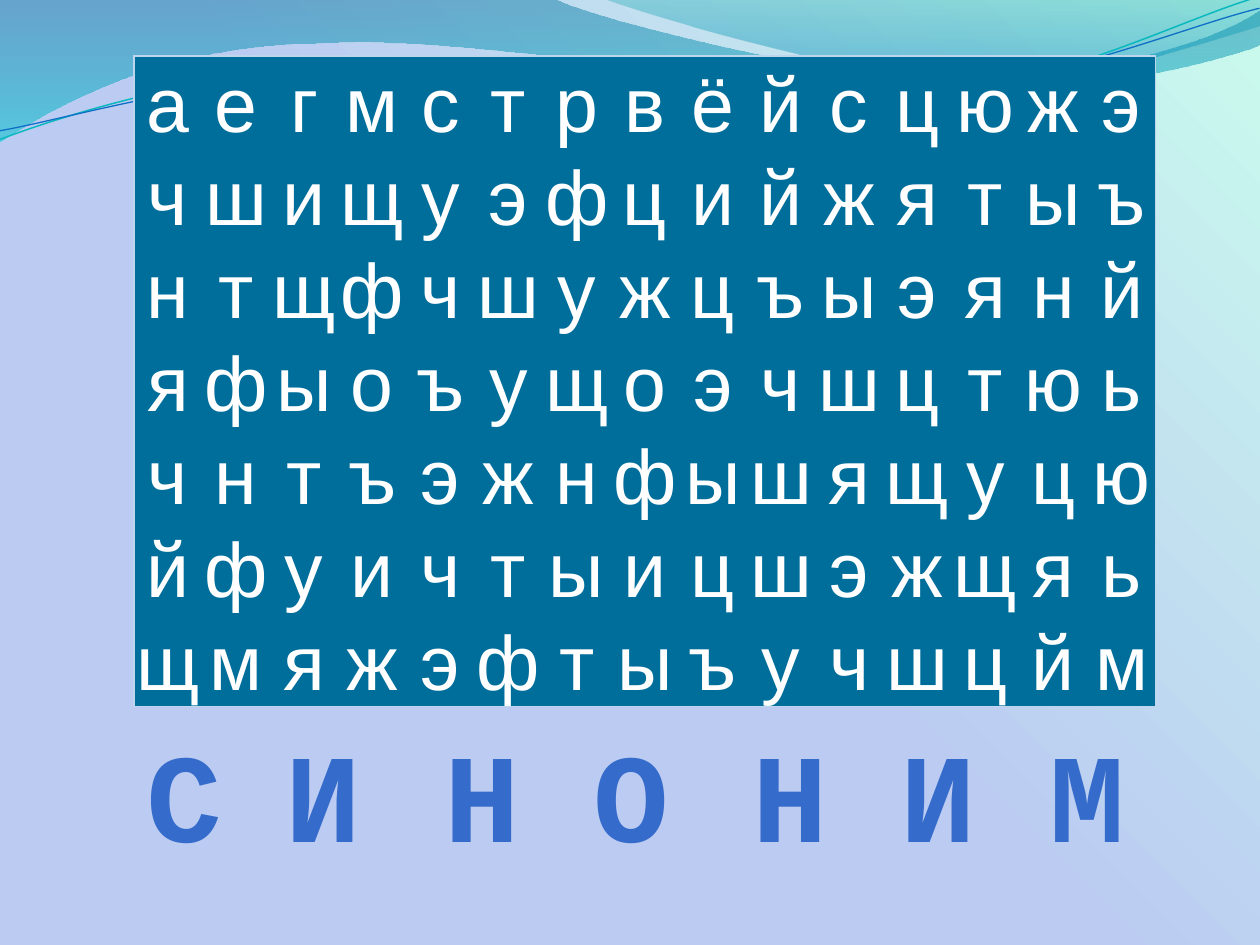
from dataclasses import dataclass

from lxml import etree
from pptx import Presentation
from pptx import util as u
from pptx.dml.color import RGBColor
from pptx.enum import text
from pptx.oxml import ns

PX = 914400 // 126  # EMU in one px


@dataclass(frozen=True)
class Theme:
    # Gradient stops are (position %, colour, opacity %)
    page: tuple = ((0, "BBCBF2", 100), (50, "BBCBF2", 100), (100, "CAFBED", 100))
    back_wave: tuple = ((0, "0074A1", 45), (100, "00C6CF", 55))
    front_wave: tuple = ((0, "00A1A9", 30), (80, "008BBF", 45), (100, "008BBF", 45))
    answer: tuple = ((0, "6488D4", 100), (49, "356BCA", 100), (50, "005DB1", 100),
                     (92, "00539E", 100), (100, "00519B", 100))
    teal_line: str = "0AB8BF"
    blue_line: str = "0F6FC6"
    grid_fill: str = "006E9B"
    grid_border: str = "BDD5ED"
    grid_text: str = "FFFFFF"
    grid_font: str = "Arial"
    grid_size: int = 44
    answer_font: str = "Courier New"
    answer_size: int = 72


THEME = Theme()

LETTER_ROWS = (
    "аегмстрвёйсцюжэ",
    "чшищуэфцийжятыъ",
    "нтщфчшужцъыэянй",
    "яфыоъущоэчшцтюь",
    "чнтъэжнфышящуцю",
    "йфуичтыицшэжщяь",
    "щмяжэфтыъучшцйм",
)

# Letter, left and width in px
ANSWER = (("С", 134, 110), ("И", 273, 118), ("Н", 432, 112), ("О", 581, 149),
          ("Н", 740, 89), ("И", 888, 139), ("М", 1037, 118))

# Outlines in px: two numbers are a line's end, six are a Bezier curve
BACK_WAVE = ((0, -1), (554, -1), (600, 21, 837, 79, 955, 79),
             (1075, 79, 1207, 47, 1260, 11), (1261, 45),
             (1239, 55, 1096, 96, 940, 95), (784, 95, 481, 35, 324, 43),
             (163, 44, 58, 105, -1, 142))
FRONT_WAVE = ((604, -1), (641, 14, 859, 78, 969, 82),
              (1079, 87, 1211, 40, 1260, 26), (1260, 0))
TEAL_CURVE = ((-3, 110), (58, 90, 199, 52, 350, 53), (499, 53, 745, 118, 896, 114),
              (1049, 109, 1184, 45, 1260, 27))
BLUE_CURVE = ((-2, 101), (57, 94, 207, 57, 357, 58), (509, 58, 751, 111, 902, 108),
              (1052, 104, 1188, 52, 1262, 38))


def px(length):
    return u.Emu(length * PX)


def child(parent, tag, **attributes):
    return etree.SubElement(parent, ns.qn(tag), attributes)


def use_gradient(parent, stops, angle):
    """Put a gradient in the place of the parent's solid fill."""
    solid = parent.find(ns.qn("a:solidFill"))
    gradient = etree.Element(ns.qn("a:gradFill"), rotWithShape="1")
    stop_list = child(gradient, "a:gsLst")
    for position, colour, opacity in stops:
        stop = child(stop_list, "a:gs", pos=str(position * 1000))
        shade = child(stop, "a:srgbClr", val=colour)
        if opacity < 100:
            child(shade, "a:alpha", val=str(opacity * 1000))
    child(gradient, "a:lin", ang=str(angle * 60000), scaled="0")
    parent.replace(solid, gradient)


def bend(shape, segments):
    """Join each three line ends that belong to a curve into one Bezier."""
    lines = iter(list(shape._element.iter(ns.qn("a:lnTo"))))
    for segment in segments:
        line = next(lines)
        if len(segment) == 6:
            curve = etree.Element(ns.qn("a:cubicBezTo"))
            line.addprevious(curve)
            for part in (line, next(lines), next(lines)):
                curve.append(part[0])
                part.getparent().remove(part)


def add_outline(page, outline, close):
    start, *segments = outline
    points = [pair for segment in segments
              for pair in zip(segment[::2], segment[1::2])]
    builder = page.shapes.build_freeform(*start, scale=PX)
    builder.add_line_segments(points, close=close)
    shape = builder.convert_to_shape()
    bend(shape, segments)
    shape.shadow.inherit = False
    return shape


def add_wave(page, outline, stops):
    wave = add_outline(page, outline, close=True)
    wave.line.fill.background()
    wave.fill.solid()
    use_gradient(wave.fill._xPr, stops, 90)


def add_curve(page, outline, colour, width):
    curve = add_outline(page, outline, close=False)
    curve.rotation = 357.3
    curve.fill.background()
    curve.line.color.rgb = RGBColor.from_string(colour)
    curve.line.width = u.Pt(width)


def write(frame, words, *, font, size, bold=False, colour=None, stops=None, align=None):
    para = frame.paragraphs[0]
    para.alignment = align
    span = para.add_run()
    span.text = words
    span.font.name = font
    span.font.size = u.Pt(size)
    span.font.bold = bold
    span.font.fill.solid()
    if stops:
        use_gradient(span.font.fill._xPr, stops, 90)
    else:
        span.font.fill.fore_color.rgb = RGBColor.from_string(colour)


def add_border(cell, side):
    line = child(cell._tc.get_or_add_tcPr(), f"a:ln{side}", w=str(u.Pt(0.75)))
    child(child(line, "a:solidFill"), "a:srgbClr", val=THEME.grid_border)


def fill_cell(cell, letter, sides):
    cell.margin_left = cell.margin_right = cell.margin_top = px(1)
    cell.margin_bottom = 0
    cell.vertical_anchor = text.MSO_ANCHOR.BOTTOM
    for side in sides:
        add_border(cell, side)
    cell.fill.solid()
    cell.fill.fore_color.rgb = RGBColor.from_string(THEME.grid_fill)
    write(cell.text_frame, letter, font=THEME.grid_font, size=THEME.grid_size,
          colour=THEME.grid_text, align=text.PP_ALIGN.CENTER)


def add_letter_grid(page, left, top, width, height):
    rows, columns = len(LETTER_ROWS), len(LETTER_ROWS[0])
    frame = page.shapes.add_table(rows, columns, px(left), px(top), px(width), px(height))
    table = frame.table
    table.first_row = table.horz_banding = False
    style = table._tbl.tblPr.find(ns.qn("a:tableStyleId"))
    style.text = "{2D5ABB26-0587-4C30-8999-92F81FD0307C}"  # no style, no grid
    for r, letters in enumerate(LETTER_ROWS):
        for c, letter in enumerate(letters):
            edges = (("L", c == 0), ("R", c == columns - 1),
                     ("T", r == 0), ("B", r == rows - 1))
            fill_cell(table.cell(r, c), letter, [side for side, outer in edges if outer])


def add_answer_letter(page, letter, left, width):
    box = page.shapes.add_textbox(px(left), px(710), px(width), px(165))
    box.text_frame.word_wrap = True
    box.text_frame.auto_size = text.MSO_AUTO_SIZE.SHAPE_TO_FIT_TEXT
    write(box.text_frame, letter, font=THEME.answer_font, size=THEME.answer_size,
          bold=True, stops=THEME.answer)


def main():
    deck = Presentation()
    deck.slide_width, deck.slide_height = u.Inches(10), u.Inches(7.5)
    page = deck.slides.add_slide(deck.slide_layouts[6])
    page.background.fill.solid()
    use_gradient(page.background.fill._xPr, THEME.page, 315)
    add_wave(page, BACK_WAVE, THEME.back_wave)
    add_wave(page, FRONT_WAVE, THEME.front_wave)
    add_curve(page, TEAL_CURVE, THEME.teal_line, 0.85)
    add_curve(page, BLUE_CURVE, THEME.blue_line, 0.75)
    add_letter_grid(page, 134, 56, 1022, 651)
    for letter, left, width in ANSWER:
        add_answer_letter(page, letter, left, width)
    deck.save("out.pptx")


if __name__ == "__main__":
    main()
